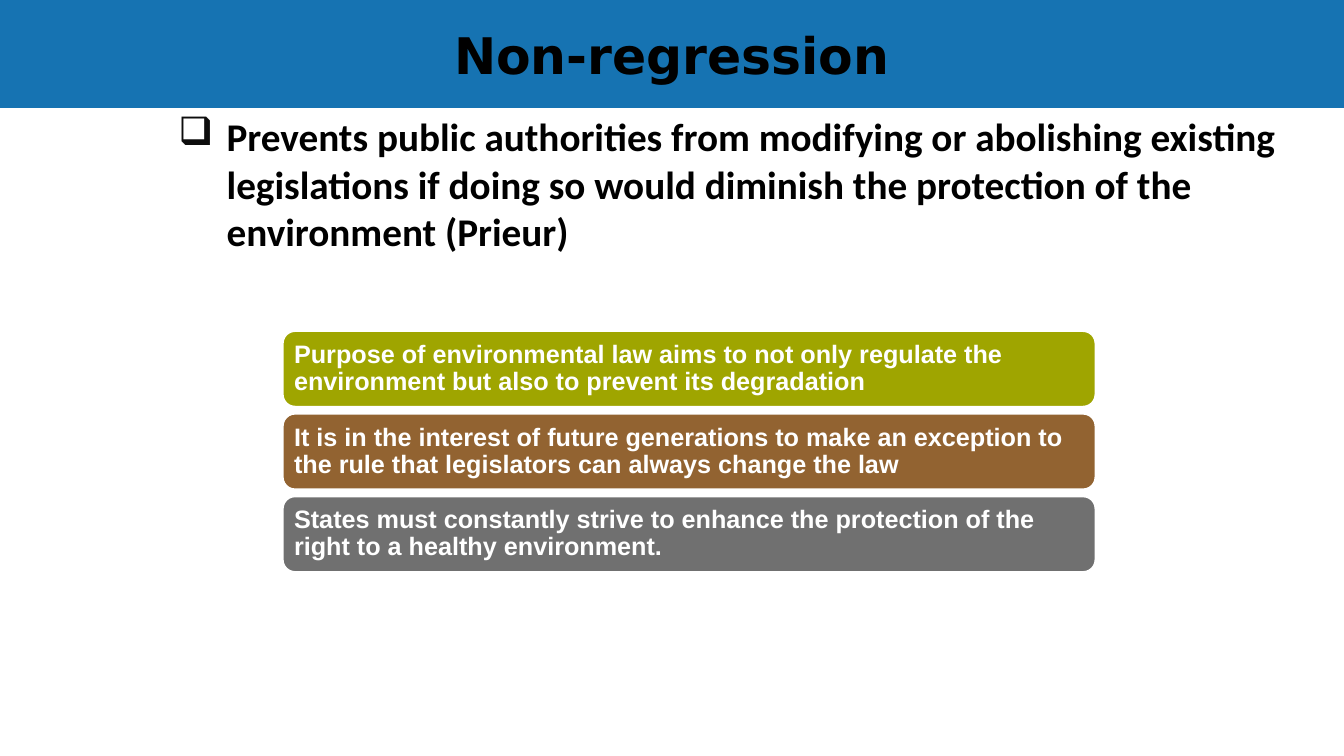
from dataclasses import dataclass

from lxml.etree import SubElement
from pptx import Presentation
from pptx.dml.color import RGBColor
from pptx.enum.shapes import MSO_SHAPE
from pptx.enum.text import MSO_ANCHOR, MSO_AUTO_SIZE, PP_ALIGN
from pptx.oxml.ns import qn
from pptx.slide import Slide
from pptx.text.text import TextFrame, _Paragraph
from pptx.util import Inches, Pt

SLIDE_WIDTH, SLIDE_HEIGHT = 13.33, 7.5
BANNER_HEIGHT = 1.07
REASON_LEFT, REASON_TOP = 2.8, 3.28
REASON_WIDTH, REASON_HEIGHT = 8.07, 0.76
REASON_PITCH = 0.82


@dataclass
class Reason:
    text: str
    fill: str


REASONS = [
    Reason("Purpose of environmental law aims to not only regulate the environment "
           "but also to prevent its degradation", "9FA500"),
    Reason("It is in the interest of future generations to make an exception to the "
           "rule that legislators can always change the law", "926331"),
    Reason("States must constantly strive to enhance the protection of the right to "
           "a healthy environment.", "707070"),
]
DEFINITION = ("Prevents public authorities from modifying or abolishing existing "
              "legislations if doing so would diminish the protection of the "
              "environment (Prieur)")


def color(value: str) -> RGBColor:
    return RGBColor.from_string(value)


def format_frame(frame: TextFrame, anchor: MSO_ANCHOR, side: float, edge: float) -> None:
    values = {
        "word_wrap": True,
        "auto_size": MSO_AUTO_SIZE.NONE,
        "vertical_anchor": anchor,
        "margin_left": Inches(side),
        "margin_right": Inches(side),
        "margin_top": Inches(edge),
        "margin_bottom": Inches(edge),
    }
    for name, value in values.items():
        setattr(frame, name, value)


def write(paragraph: _Paragraph, text: str, font: str, size: int, fill: str,
          alignment: PP_ALIGN = PP_ALIGN.LEFT) -> None:
    paragraph.text = text
    paragraph.alignment = alignment
    for name, value in {"name": font, "size": Pt(size), "bold": True}.items():
        setattr(paragraph.font, name, value)
    paragraph.font.color.rgb = color(fill)


def add_bullet(paragraph: _Paragraph, character: str, fill: str) -> None:
    properties = paragraph._p.get_or_add_pPr()
    properties.set("marL", str(Inches(0.52)))
    properties.set("indent", str(Inches(-0.48)))
    bullet_color = SubElement(properties, qn("a:buClr"))
    SubElement(bullet_color, qn("a:srgbClr"), val=fill)
    SubElement(properties, qn("a:buChar"), char=character)


def format_title(slide: Slide) -> None:
    title = slide.shapes.title
    title.left, title.top = Inches(0), Inches(0)
    title.width, title.height = Inches(SLIDE_WIDTH), Inches(BANNER_HEIGHT)
    title.fill.solid()
    title.fill.fore_color.rgb = color("1673B2")
    format_frame(title.text_frame, MSO_ANCHOR.MIDDLE, 0.1, 0.05)
    write(title.text_frame.paragraphs[0], "Non-regression", "DejaVu Sans", 36,
          "000000", PP_ALIGN.CENTER)


def add_definition(slide: Slide) -> None:
    left = 1.63
    box = slide.shapes.add_textbox(
        Inches(left), Inches(BANNER_HEIGHT),
        Inches(SLIDE_WIDTH - left), Inches(SLIDE_HEIGHT - BANNER_HEIGHT))
    format_frame(box.text_frame, MSO_ANCHOR.TOP, 0.1, 0.05)
    paragraph = box.text_frame.paragraphs[0]
    add_bullet(paragraph, "❑", "0D0D0D")
    write(paragraph, DEFINITION, "Calibri", 28, "000000")


def add_reason(slide: Slide, reason: Reason, top: float) -> None:
    shape = slide.shapes.add_shape(
        MSO_SHAPE.ROUNDED_RECTANGLE, Inches(REASON_LEFT), Inches(top),
        Inches(REASON_WIDTH), Inches(REASON_HEIGHT))
    shape.shadow.inherit = False
    shape.fill.solid()
    shape.fill.fore_color.rgb = color(reason.fill)
    shape.line.color.rgb = color("FFFFFF")
    shape.line.width = Pt(2)
    format_frame(shape.text_frame, MSO_ANCHOR.MIDDLE, 0.08, 0.08)
    paragraph = shape.text_frame.paragraphs[0]
    paragraph.line_spacing = 0.9
    write(paragraph, reason.text, "Arial", 18, "FFFFFF")


def main() -> None:
    presentation = Presentation()
    presentation.slide_width = Inches(SLIDE_WIDTH)
    presentation.slide_height = Inches(SLIDE_HEIGHT)
    slide = presentation.slides.add_slide(presentation.slide_layouts[5])

    # Banner and definition
    format_title(slide)
    add_definition(slide)

    # Stacked reasons
    for index, reason in enumerate(REASONS):
        add_reason(slide, reason, REASON_TOP + index * REASON_PITCH)

    presentation.save("out.pptx")


if __name__ == "__main__":
    main()
